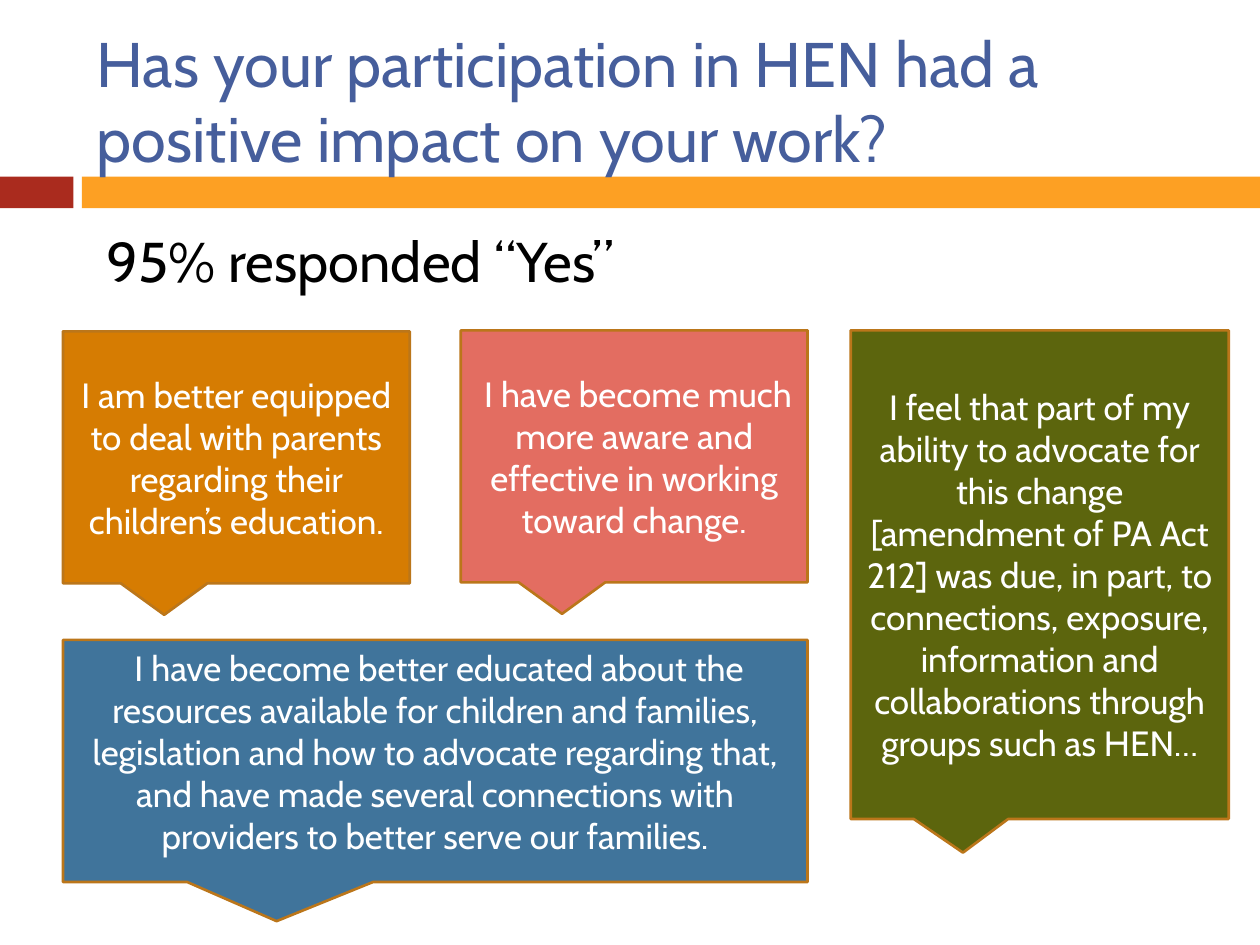
from pptx import Presentation
from pptx.dml.color import RGBColor
from pptx.enum.shapes import MSO_SHAPE
from pptx.enum.text import MSO_ANCHOR, PP_ALIGN
from pptx.util import Cm, Pt


def rgb(color):
    return RGBColor.from_string(color)


def write(sp, text, size, color, anchor):
    """Fill a shape with one wrapped paragraph and return the paragraph."""
    tf = sp.text_frame
    tf.word_wrap = True
    tf.vertical_anchor = anchor
    p = tf.paragraphs[0]
    p.text = text
    p.font.size = Pt(size)
    p.font.name = "Cabin"
    p.font.color.rgb = rgb(color)
    return p


prs = Presentation()
prs.slide_width, prs.slide_height = Cm(25.4), Cm(19.05)
s = prs.slides.add_slide(prs.slide_layouts[6])

# Divider band under the title
for left, width, color in [(0, 1.48, "AA2B1E"), (1.65, 23.75, "FDA023")]:
    sp = s.shapes.add_shape(MSO_SHAPE.RECTANGLE, Cm(left), Cm(3.56), Cm(width), Cm(0.64))
    sp.shadow.inherit = False
    sp.fill.solid()
    sp.fill.fore_color.rgb = rgb(color)
    sp.line.fill.background()

title = s.shapes.add_textbox(Cm(1.7), Cm(0.64), Cm(22.66), Cm(2.74))
write(title, "Has your participation in HEN had a positive impact on your work?",
      36, "465E9C", MSO_ANCHOR.MIDDLE)

answer = s.shapes.add_textbox(Cm(1.9), Cm(4.45), Cm(20.75), Cm(2.34))
p = write(answer, "95% responded “Yes”", 32, "000000", MSO_ANCHOR.TOP)
p.space_before = Pt(7)

# Quotes: left, top, width, height, pointer tip, fill, anchor, text
quotes = [
    (1.27, 6.68, 6.99, 5.08, (-0.208, 0.625), "D67C02", MSO_ANCHOR.MIDDLE,
     "I am better equipped to deal with parents regarding their children’s education."),
    (9.29, 6.66, 6.99, 5.08, (-0.208, 0.625), "E36D61", MSO_ANCHOR.MIDDLE,
     " I have become much more aware and effective in working toward change."),
    (17.15, 6.66, 7.62, 9.85, (-0.203, 0.569), "5C650D", MSO_ANCHOR.MIDDLE,
     "I feel that part of my ability to advocate for this change [amendment of PA Act 212] "
     "was due, in part, to connections, exposure, information and collaborations through "
     "groups such as HEN…"),
    (1.27, 12.9, 15.01, 4.88, (-0.213, 0.662), "40749B", MSO_ANCHOR.TOP,
     " I have become better educated about the resources available for children and families, "
     "legislation and how to advocate regarding that, and have made several connections with "
     "providers to better serve our families."),
]
for left, top, width, height, tip, color, anchor, text in quotes:
    sp = s.shapes.add_shape(MSO_SHAPE.RECTANGULAR_CALLOUT,
                            Cm(left), Cm(top), Cm(width), Cm(height))
    sp.shadow.inherit = False
    sp.adjustments[0], sp.adjustments[1] = tip
    sp.fill.solid()
    sp.fill.fore_color.rgb = rgb(color)
    sp.line.color.rgb = rgb("BB761A")
    sp.line.width = Pt(1.5)
    p = write(sp, text, 20, "FFFFFF", anchor)
    p.alignment = PP_ALIGN.CENTER

prs.save("out.pptx")
